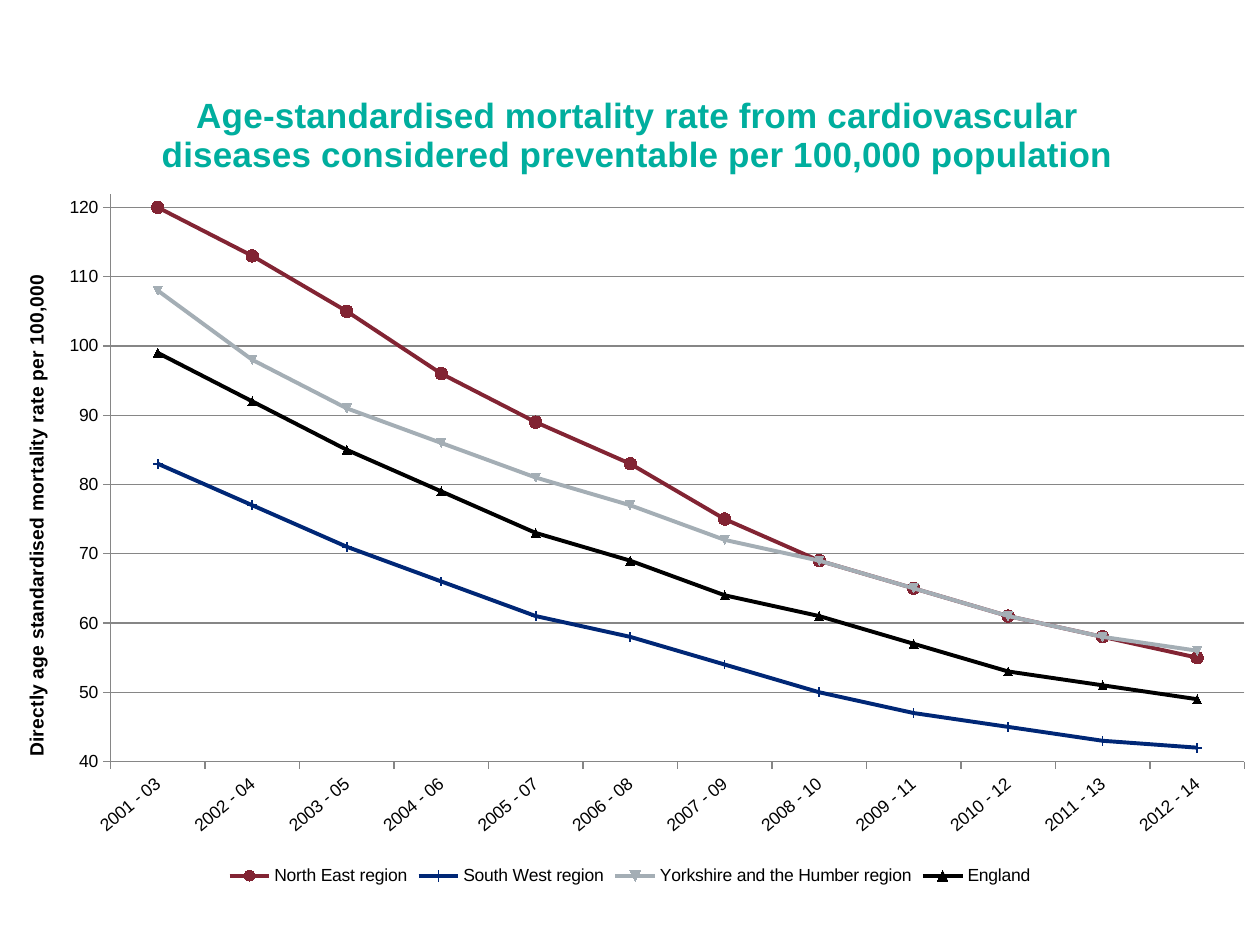
from lxml import etree
from pptx import Presentation
from pptx.chart.data import CategoryChartData
from pptx.dml.color import RGBColor
from pptx.enum.chart import XL_CHART_TYPE as ChartType
from pptx.enum.chart import XL_LEGEND_POSITION as LegendPosition
from pptx.enum.chart import XL_MARKER_STYLE as Marker
from pptx.enum.chart import XL_TICK_MARK as TickMark
from pptx.oxml.ns import qn
from pptx.util import Pt

COLORS = {
    "title": "00AE9E",
    "text": "000000",
    "grid": "868686",
    "north_east": "822433",
    "south_west": "002776",
    "yorkshire": "A4AEB5",
    "england": "000000",
}
PERIODS = [f"{year} - {year % 100 + 2:02d}" for year in range(2001, 2013)]
# name, color, marker, marker size, rates
REGIONS = [
    ("North East region", "north_east", Marker.CIRCLE, 7,
     (120, 113, 105, 96, 89, 83, 75, 69, 65, 61, 58, 55)),
    ("South West region", "south_west", Marker.PLUS, 5,
     (83, 77, 71, 66, 61, 58, 54, 50, 47, 45, 43, 42)),
    ("Yorkshire and the Humber region", "yorkshire", Marker.AUTOMATIC, 5,
     (108, 98, 91, 86, 81, 77, 72, 69, 65, 61, 58, 56)),
    ("England", "england", Marker.AUTOMATIC, 5,
     (99, 92, 85, 79, 73, 69, 64, 61, 57, 53, 51, 49)),
]


def place(element, **fractions):
    """Give a chart part a fixed position, in fractions of the chart's size."""
    layout = element.find(qn("c:layout"))
    if layout is None:
        layout = etree.Element(qn("c:layout"))
        element.insert(0, layout)
    manual = etree.SubElement(layout, qn("c:manualLayout"))
    settings = {"xMode": "edge", "yMode": "edge", **fractions}
    if "w" in fractions:
        settings = {"layoutTarget": "inner", **settings}
    for name, value in settings.items():
        etree.SubElement(manual, qn(f"c:{name}")).set("val", str(value))


def write_title(title, text, size, color):
    title.text_frame.text = text
    font = title.text_frame.paragraphs[0].runs[0].font
    settings = {"name": "Arial", "size": Pt(size), "bold": True}
    for name, value in settings.items():
        setattr(font, name, value)
    font.color.rgb = RGBColor.from_string(COLORS[color])


presentation = Presentation()
presentation.slide_width, presentation.slide_height = Pt(720), Pt(540)
slide = presentation.slides.add_slide(presentation.slide_layouts[6])

chart_data = CategoryChartData(number_format="0")
chart_data.categories = PERIODS
for name, _, _, _, rates in REGIONS:
    chart_data.add_series(name, rates)
chart = slide.shapes.add_chart(
    ChartType.LINE_MARKERS, Pt(-6.5), Pt(30.2), Pt(733), Pt(478.8), chart_data
).chart
chart.font.name = "Arial"
chart.font.size = Pt(10)
chart.font.color.rgb = RGBColor.from_string(COLORS["text"])

# Title
write_title(
    chart.chart_title,
    "Age-standardised mortality rate from cardiovascular "
    "diseases considered preventable per 100,000 population",
    20, "title",
)
title_element = chart.chart_title.text_frame._txBody.getparent().getparent()
place(title_element, x=0.13, y=0.04)

# Plot and legend
plot = chart.plots[0]
plot.vary_by_categories = False
place(chart._chartSpace.chart.plotArea, x=0.095, y=0.168, w=0.884, h=0.678)
chart.has_legend = True
chart.legend.position = LegendPosition.BOTTOM
chart.legend.include_in_layout = False

# Axes
rates_axis, periods_axis = chart.value_axis, chart.category_axis
axis_settings = {
    "minimum_scale": 40,
    "maximum_scale": 122,
    "major_unit": 10,
    "has_major_gridlines": True,
}
for name, value in axis_settings.items():
    setattr(rates_axis, name, value)
rates_axis.tick_labels.number_format = "0"
rates_axis.tick_labels.number_format_is_linked = False
write_title(
    rates_axis.axis_title,
    "Directly age standardised mortality rate per 100,000",
    11, "text",
)
rates_title = rates_axis.axis_title.text_frame._txBody
rates_title.bodyPr.set("rot", "-5400000")
rates_title.bodyPr.set("vert", "horz")
place(rates_title.getparent().getparent(), x=0.024, y=0.26)

for axis in (rates_axis, periods_axis):
    axis.major_tick_mark = TickMark.OUTSIDE
    axis.minor_tick_mark = TickMark.NONE
    axis.tick_labels.font.size = Pt(10)
for part in (rates_axis, periods_axis, rates_axis.major_gridlines):
    part.format.line.width = Pt(0.75)
    part.format.line.color.rgb = RGBColor.from_string(COLORS["grid"])
period_labels = periods_axis._element.find(qn("c:txPr"))
period_labels.find(qn("a:bodyPr")).set("rot", "-2400000")

# Series
for series, (_, color_name, marker, size, _) in zip(plot.series, REGIONS):
    color = RGBColor.from_string(COLORS[color_name])
    series.smooth = False
    series.format.line.width = Pt(2.25)
    series.format.line.color.rgb = color
    series.marker.style = marker
    series.marker.size = size
    series.marker.format.fill.solid()
    series.marker.format.fill.fore_color.rgb = color
    series.marker.format.line.color.rgb = color

presentation.save("out.pptx")
